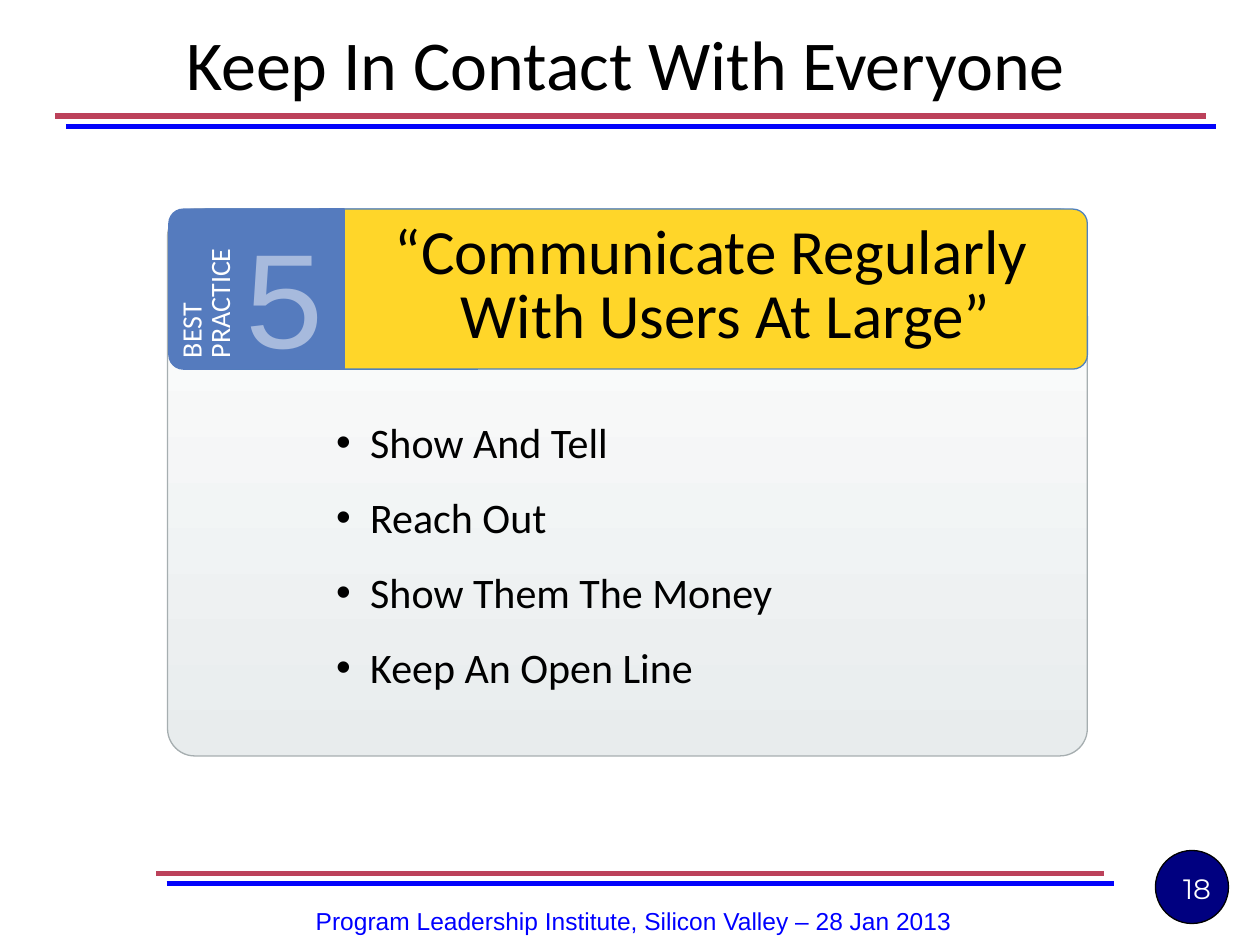
from dataclasses import dataclass
from typing import NamedTuple, Optional, Sequence

from lxml.etree import SubElement
from pptx import Presentation
from pptx.dml.color import RGBColor
from pptx.enum.shapes import MSO_CONNECTOR, MSO_SHAPE
from pptx.enum.text import MSO_ANCHOR, PP_ALIGN
from pptx.oxml.ns import qn
from pptx.util import Inches, Pt

COLS, ROWS = 100, 75


@dataclass(frozen=True)
class Theme:
    text: str = "000000"
    white: str = "FFFFFF"
    rule: str = "BC415A"
    rule_shadow: str = "0303FB"
    footer: str = "0000FF"
    badge: str = "000080"
    panel_end: str = "E8ECED"
    panel_line: str = "A6AEB0"
    banner: str = "FFD629"
    banner_line: str = "4F81BD"
    tab: str = "557BBE"
    numeral: str = "A7BADD"
    body_font: str = "Calibri"
    footer_font: str = "Arial"
    page_font: str = "Montserrat"
    numeral_font: str = "Courier New"
    title_size: int = 40
    banner_size: int = 36
    bullet_size: int = 24
    small_size: int = 16
    footer_size: int = 14
    numeral_size: int = 80
    hairline: float = 0.75
    rule_width: int = 3


class Box(NamedTuple):
    col: float
    row: float
    cols: float
    rows: float


class Rule(NamedTuple):
    start: float
    end: float
    row: float


class Block(NamedTuple):
    preset: MSO_SHAPE
    box: Box
    fill: str
    line: str
    corner: Optional[float] = None
    fill_end: Optional[str] = None


T = Theme()
prs = Presentation()
prs.slide_width, prs.slide_height = Inches(10), Inches(7.5)
s = prs.slides.add_slide(prs.slide_layouts[6])


def x(cols: float) -> int:
    return round(prs.slide_width * cols / COLS)


def y(rows: float) -> int:
    return round(prs.slide_height * rows / ROWS)


def place(box: Box) -> tuple:
    return x(box.col), y(box.row), x(box.cols), y(box.rows)


def add_rule(rule: Rule) -> None:
    c = s.shapes.add_connector(
        MSO_CONNECTOR.STRAIGHT, x(rule.start), y(rule.row), x(rule.end), y(rule.row))
    c.line.color.rgb = RGBColor.from_string(T.rule)
    c.line.width = Pt(T.rule_width)
    effects = SubElement(c._element.spPr, qn("a:effectLst"))
    shadow = SubElement(effects, qn("a:outerShdw"), dist=str(Pt(8.5)),
                        dir=str(45 * 60000), algn="ctr", rotWithShape="0")
    SubElement(shadow, qn("a:srgbClr"), val=T.rule_shadow)


def add_block(block: Block) -> None:
    sp = s.shapes.add_shape(block.preset, *place(block.box))
    sp.shadow.inherit = False
    if block.corner is not None:
        sp.adjustments[0] = block.corner
    if block.fill_end:
        sp.fill.gradient()
        sp.fill.gradient_angle = 270
        for stop, color in zip(sp.fill.gradient_stops, (block.fill, block.fill_end)):
            stop.color.rgb = RGBColor.from_string(color)
    else:
        sp.fill.solid()
        sp.fill.fore_color.rgb = RGBColor.from_string(block.fill)
    sp.line.color.rgb = RGBColor.from_string(block.line)
    sp.line.width = Pt(T.hairline)


def add_text(lines: Sequence[str], box: Box, *, size: int, font: str = T.body_font,
             color: str = T.text, align: PP_ALIGN = PP_ALIGN.LEFT,
             anchor: MSO_ANCHOR = MSO_ANCHOR.TOP, wrap: bool = True,
             rotation: float = 0, spacing: Optional[float] = None, after: float = 0,
             bullet: Optional[str] = None, hang: float = 0,
             last_indent: float = 0) -> None:
    sp = s.shapes.add_textbox(*place(box))
    sp.rotation = rotation
    tf = sp.text_frame
    tf.word_wrap, tf.vertical_anchor = wrap, anchor
    for i, line in enumerate(lines):
        p = tf.paragraphs[0] if i == 0 else tf.add_paragraph()
        p.alignment, p.line_spacing, p.space_after = align, spacing, Pt(after)
        pPr = p._p.get_or_add_pPr()
        if bullet:
            pPr.set("marL", str(x(hang)))
            pPr.set("indent", str(-x(hang)))
            SubElement(pPr, qn("a:buFont"), typeface=T.footer_font)
            SubElement(pPr, qn("a:buChar"), char=bullet)
        elif last_indent and i == len(lines) - 1:
            pPr.set("marL", str(x(last_indent)))
        r = p.add_run()
        r.text = line
        r.font.size, r.font.name = Pt(size), font
        r.font.color.rgb = RGBColor.from_string(color)


ROUND, RECT = MSO_SHAPE.ROUNDED_RECTANGLE, MSO_SHAPE.RECTANGLE
CARD_TOP, BANNER_ROWS = 16.6, 12.7
RULES = (Rule(12.4, 87.6, 69.3), Rule(4.4, 95.7, 9.2))
BLOCKS = (
    Block(MSO_SHAPE.OVAL, Box(91.7, 67.5, 5.8, 5.8), T.badge, T.text),
    Block(ROUND, Box(13.3, CARD_TOP, 73, 43.4), T.white, T.panel_line, 0.05, T.panel_end),
    Block(ROUND, Box(15.2, CARD_TOP, 71.1, BANNER_ROWS), T.banner, T.banner_line, 0.09),
    Block(ROUND, Box(13.4, CARD_TOP, 13.9, BANNER_ROWS), T.tab, T.tab, 0.09),
    Block(RECT, Box(25.4, CARD_TOP, 1.9, BANNER_ROWS), T.tab, T.tab),
)


def main() -> None:
    add_text(["Program Leadership Institute, Silicon Valley – 28 Jan 2013"],
             Box(13.1, 70.5, 74.4, 5.2), size=T.footer_size, font=T.footer_font,
             color=T.footer, align=PP_ALIGN.CENTER, anchor=MSO_ANCHOR.MIDDLE)
    for rule in RULES:
        add_rule(rule)
    for block in BLOCKS:
        add_block(block)
    add_text(["18"], Box(73.8, 68.7, 23.3, 5.2), size=T.small_size, font=T.page_font,
             color=T.white, align=PP_ALIGN.RIGHT)
    add_text(["BEST", "PRACTICE"], Box(9.9, 20, 13.2, 5.6), size=T.small_size,
             color=T.white, wrap=False, rotation=270, spacing=0.85)
    add_text(["5"], Box(18.3, 16.1, 10.9, 14.3), size=T.numeral_size,
             font=T.numeral_font, color=T.numeral)
    add_text(["“Communicate Regularly", "With Users At Large”"],
             Box(30.1, 17.2, 52.7, 11.3), size=T.banner_size, align=PP_ALIGN.CENTER,
             spacing=0.85, last_indent=2.3)
    add_text(["Show And Tell", "Reach Out", "Show Them The Money", "Keep An Open Line"],
             Box(25.7, 32.6, 58.6, 24.2), size=T.bullet_size, after=14,
             bullet="•", hang=2.7)
    add_text(["Keep In Contact With Everyone"], Box(13.8, 2, 72.8, 6),
             size=T.title_size, anchor=MSO_ANCHOR.MIDDLE)
    prs.save("out.pptx")


if __name__ == "__main__":
    main()
